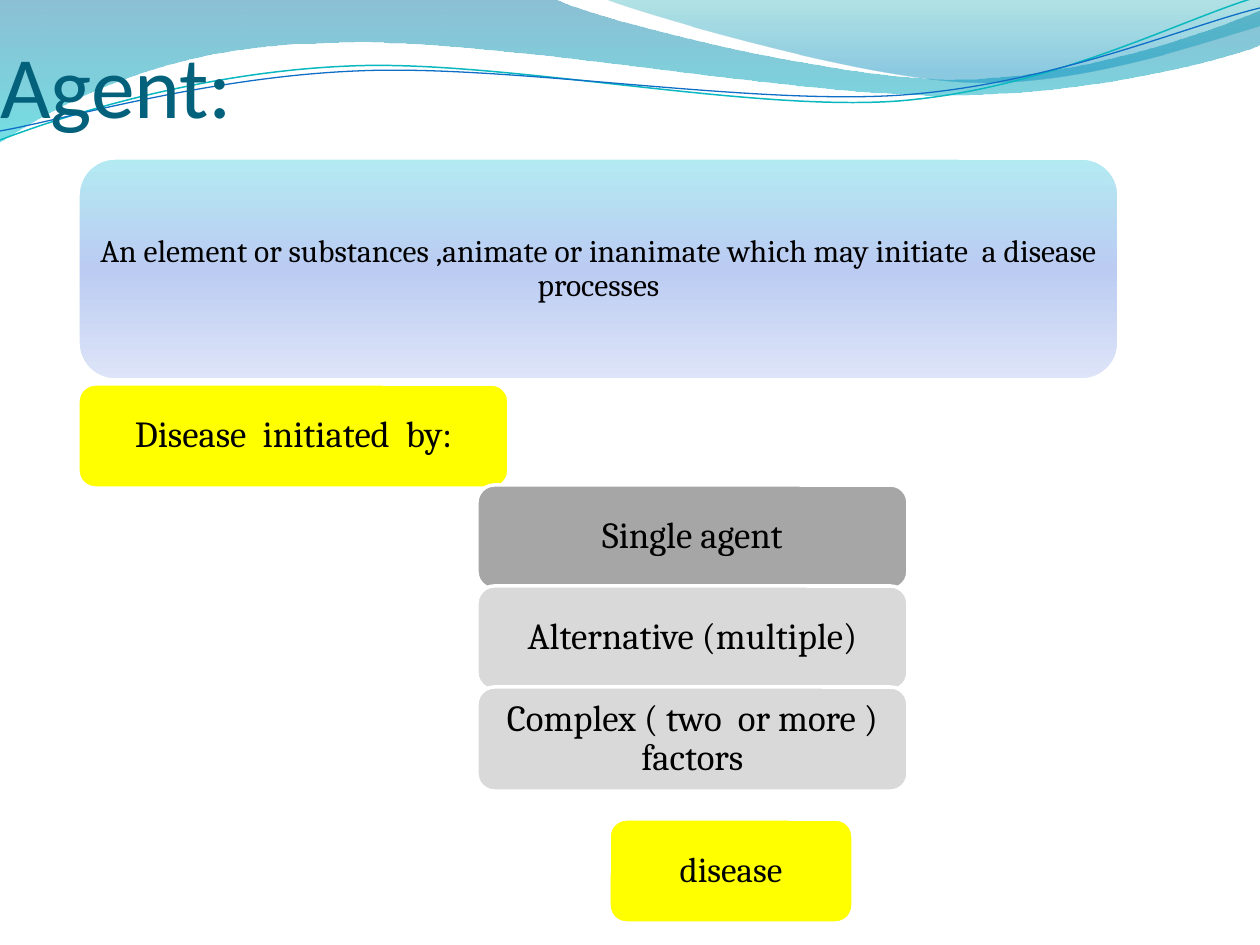
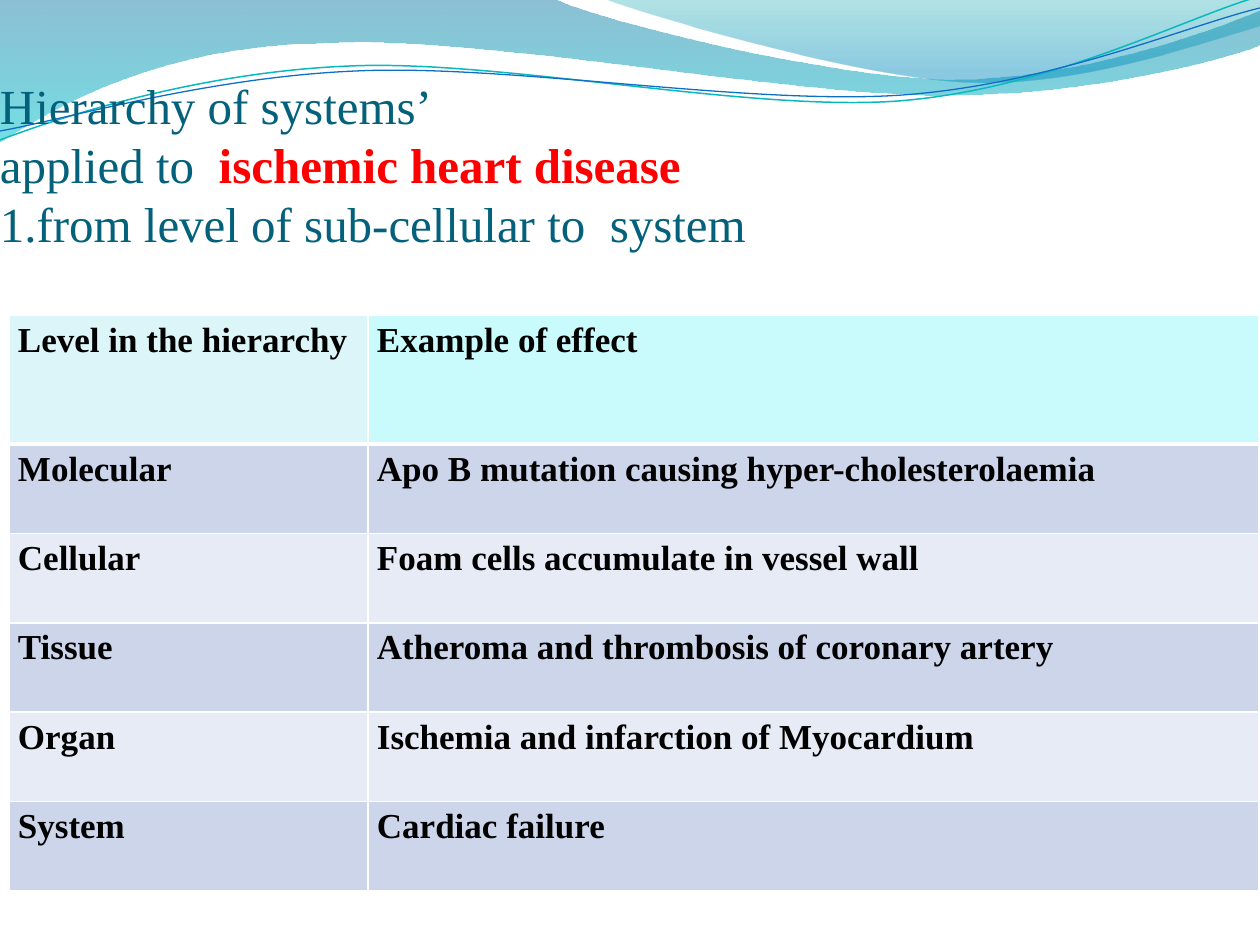
from dataclasses import dataclass

from lxml import etree
from pptx import Presentation
from pptx.dml.color import RGBColor
from pptx.enum.shapes import MSO_SHAPE as SHAPE
from pptx.enum.text import MSO_ANCHOR as ANCHOR, PP_ALIGN as ALIGN
from pptx.oxml.ns import qn
from pptx.util import Emu, Pt

SCALE = 914400 / 126


@dataclass(frozen=True)
class Theme:
    """Colours, fonts and type sizes of the deck."""
    title: str = "04617B"
    accent: str = "FF0000"
    text: str = "000000"
    white: str = "FFFFFF"
    yellow: str = "FFFF00"
    grey: str = "A6A6A6"
    light_grey: str = "D9D9D9"
    header: tuple = ("DBF5F9", "C9FAFC")
    bands: tuple = ("CCD5EA", "E7EBF5")
    panel: tuple = ((0, "B3EAF2", 100), (50, "BBCBF2", 100), (100, "DEE5F8", 100))
    back_wave: tuple = ((0, "0074A1", 45), (100, "00C6CF", 55))
    front_wave: tuple = ((0, "00A1A9", 30), (80, "008BBF", 45))
    teal_line: str = "0AB8BF"
    blue_line: str = "0F6FC6"
    sans: str = "Calibri"
    body: str = "Cambria"
    serif: str = "Times New Roman"
    big_title: int = 50
    long_title: int = 28
    panel_size: int = 18
    box_size: int = 21
    small_size: int = 20


T = Theme()

BACK_WAVE = [(0, 0), (554, -1), (600, 21, 837, 79, 955, 79),
             (1075, 79, 1207, 33, 1260, 11), (1261, 45),
             (1239, 55, 1096, 96, 940, 95), (781, 95, 481, 35, 324, 43),
             (163, 45, 58, 105, -1, 142)]
FRONT_WAVE = [(604, -1), (641, 14, 859, 78, 969, 82),
              (1079, 87, 1211, 40, 1260, 26), (1260, 0)]
TEAL_CURVE = [(0, 140), (60, 117, 199, 72, 349, 66),
              (498, 59, 747, 112, 898, 101), (1050, 89, 1182, 19, 1257, -3)]
BLUE_CURVE = [(0, 131), (59, 121, 207, 77, 357, 71),
              (508, 64, 752, 106, 903, 95), (1053, 84, 1186, 26, 1260, 8)]

LEVELS = [
    ("Level in the hierarchy", "Example of effect"),
    ("Molecular", "Apo B mutation causing hyper-cholesterolaemia"),
    ("Cellular", "Foam cells accumulate in vessel wall"),
    ("Tissue", "Atheroma and thrombosis of coronary artery"),
    ("Organ", "Ischemia and infarction of Myocardium"),
    ("System", "Cardiac failure"),
]


def px(n):
    """Turn px into EMU."""
    return Emu(round(n * SCALE))


def rgb(color):
    """Turn a hex string into a colour."""
    return RGBColor.from_string(color)


def style(r, font, size, color, bold=False):
    """Format one run."""
    r.font.name, r.font.size, r.font.bold = font, Pt(size), bold
    r.font.color.rgb = rgb(color)


def set_margins(tf, side, top):
    """Set the insets of a text frame or a cell."""
    tf.margin_left = tf.margin_right = px(side)
    tf.margin_top = tf.margin_bottom = px(top)


def paint(sp, fill):
    """Fill a shape with a colour, a downward gradient or nothing."""
    sp.shadow.inherit = False
    if fill is None:
        sp.fill.background()
    elif isinstance(fill, str):
        sp.fill.solid()
        sp.fill.fore_color.rgb = rgb(fill)
    else:
        sp.fill.gradient()
        sp.fill.gradient_angle = 270
        stops = sp._element.spPr.find(qn("a:gradFill")).find(qn("a:gsLst"))
        for gs in list(stops):
            stops.remove(gs)
        for pos, color, alpha in fill:
            gs = etree.SubElement(stops, qn("a:gs"), pos=str(pos * 1000))
            clr = etree.SubElement(gs, qn("a:srgbClr"), val=color)
            if alpha < 100:
                etree.SubElement(clr, qn("a:alpha"), val=str(alpha * 1000))


def outline(sp, color=None, width=0):
    """Draw a shape's line, or remove it."""
    if color is None:
        sp.line.fill.background()
    else:
        sp.line.color.rgb = rgb(color)
        sp.line.width = Pt(width)


def bend(sp, segments):
    """Join each triple of line points that stands for a curve into a cubic."""
    lines = iter(list(sp._element.iter(qn("a:lnTo"))))
    for seg in segments[1:]:
        steps = [next(lines) for _ in range(len(seg) // 2)]
        if len(steps) == 3:
            cubic = etree.Element(qn("a:cubicBezTo"))
            steps[0].addprevious(cubic)
            for step in steps:
                cubic.append(step[0])
                step.getparent().remove(step)


def add_curve(s, segments, fill=None, color=None, width=0):
    """Add one wave or curved line."""
    fb = s.shapes.build_freeform(*segments[0], scale=SCALE)
    fb.add_line_segments([seg[i:i + 2] for seg in segments[1:]
                          for i in range(0, len(seg), 2)], close=fill is not None)
    sp = fb.convert_to_shape()
    bend(sp, segments)
    paint(sp, fill)
    outline(sp, color, width)


def add_band(s):
    """Add the wave band at the top of a slide."""
    add_curve(s, BACK_WAVE, T.back_wave)
    add_curve(s, FRONT_WAVE, T.front_wave)
    add_curve(s, TEAL_CURVE, color=T.teal_line, width=0.85)
    add_curve(s, BLUE_CURVE, color=T.blue_line, width=0.75)


def add_title(s, box, lines, font, size):
    """Add a bottom-anchored title; each line is a list of (text, accented)."""
    tf = s.shapes.add_textbox(*map(px, box)).text_frame
    tf.word_wrap = True
    tf.vertical_anchor = ANCHOR.BOTTOM
    set_margins(tf, 0, 0)
    p = tf.paragraphs[0]
    for i, line in enumerate(lines):
        if i:
            p.add_line_break()
        for text, accented in line:
            r = p.add_run()
            r.text = text
            style(r, font, size, T.accent if accented else T.title, accented)


def add_box(s, box, text, fill, size=T.box_size, side=11):
    """Add a rounded box with centred text."""
    sp = s.shapes.add_shape(SHAPE.ROUNDED_RECTANGLE, *map(px, box))
    paint(sp, fill)
    outline(sp, T.white, 2)
    tf = sp.text_frame
    tf.word_wrap = True
    tf.vertical_anchor = ANCHOR.MIDDLE
    set_margins(tf, side, 5)
    tf.text = text
    p = tf.paragraphs[0]
    p.alignment = ALIGN.CENTER
    p.line_spacing = 0.9
    style(p.runs[0], T.body, size, T.text)


def add_causes(s, box):
    """Add the definition, its stepped list of causes and the outcome."""
    x, y, w, h = box
    bw, bh, step = 431, 104, 101
    add_box(s, (x, y, w, 222),
            "An element or substances ,animate or inanimate which may initiate  a disease processes",
            T.panel, T.panel_size, 8)
    add_box(s, (x, y + 226, bw, bh), "Disease  initiated  by:", T.yellow)
    causes = [("Single agent", T.grey), ("Alternative (multiple)", T.light_grey),
              ("Complex ( two  or more ) factors", T.light_grey)]
    for i, (text, fill) in enumerate(causes):
        add_box(s, (x + 399, y + 327 + i * step, bw, bh), text, fill)
    add_box(s, (x + 531, y + h - bh, 244, bh), "disease", T.yellow, T.small_size)


def add_borders(cell, widths):
    """Give a cell white borders; widths are left, right, top, bottom in points."""
    tc_pr = cell._tc.get_or_add_tcPr()
    for i, (side, width) in enumerate(zip("LRTB", widths)):
        ln = etree.Element(qn("a:ln" + side), w=str(Pt(width)))
        fill = etree.SubElement(ln, qn("a:solidFill"))
        etree.SubElement(fill, qn("a:srgbClr"), val=T.white)
        tc_pr.insert(i, ln)


def add_levels(s, box):
    """Add the table of hierarchy levels."""
    x, y, w, h = box
    first_col, head = 359, 129
    table = s.shapes.add_table(len(LEVELS), 2, *map(px, box)).table
    table.columns[0].width, table.columns[1].width = px(first_col), px(w - first_col)
    for i, texts in enumerate(LEVELS):
        table.rows[i].height = px((h - head) / (len(LEVELS) - 1) if i else head)
        for j, text in enumerate(texts):
            cell = table.cell(i, j)
            cell.fill.solid()
            cell.fill.fore_color.rgb = rgb(T.bands[(i - 1) % 2] if i else T.header[j])
            add_borders(cell, (1, 1, 3 if i == 1 else 1, 1 if i else 3))
            set_margins(cell, 9, 0)
            cell.vertical_anchor = ANCHOR.TOP
            cell.text = text
            p = cell.text_frame.paragraphs[0]
            p.line_spacing = 1.15
            style(p.runs[0], T.serif, T.small_size, T.text, True)


def new_slide(prs):
    """Add a blank slide with the wave band."""
    s = prs.slides.add_slide(prs.slide_layouts[6])
    add_band(s)
    return s


def agent_slide(prs):
    """Build the slide on the agent."""
    s = new_slide(prs)
    add_title(s, (0, 0, 1229, 136), [[("Agent:", False)]], T.sans, T.big_title)
    add_causes(s, (78, 158, 1041, 765))


def hierarchy_slide(prs):
    """Build the slide on the hierarchy of systems."""
    s = new_slide(prs)
    lines = [[("Hierarchy of systems’", False)],
             [("applied to  ", False), ("ischemic heart disease", True)],
             [("1.from level of sub-cellular to  system", False)]]
    add_title(s, (0, 0, 1260, 252), lines, T.serif, T.long_title)
    add_levels(s, (9, 315, 1250, 576))


def main():
    """Build and save the deck."""
    prs = Presentation()
    prs.slide_width, prs.slide_height = px(1260), px(945)
    agent_slide(prs)
    hierarchy_slide(prs)
    prs.save("out.pptx")


if __name__ == "__main__":
    main()
